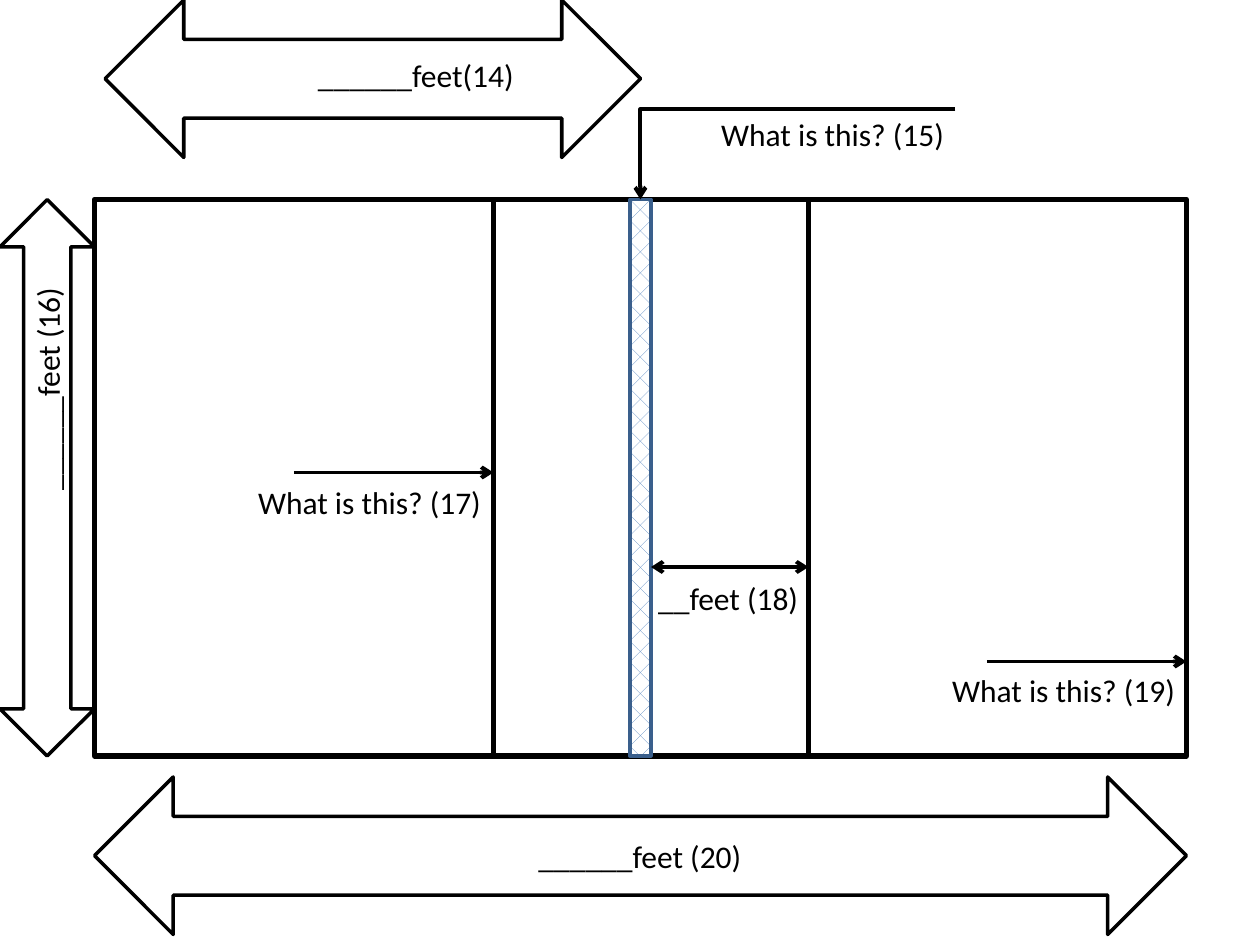
from lxml import etree
from pptx import Presentation
from pptx import util as u
from pptx.dml.color import RGBColor
from pptx.enum import dml, shapes, text
from pptx.oxml.ns import qn

BLACK = RGBColor(0x00, 0x00, 0x00)
WHITE = RGBColor(0xFF, 0xFF, 0xFF)
BLUE = RGBColor(0x4F, 0x81, 0xBD)
NAVY = RGBColor(0x3A, 0x5F, 0x8C)

prs = Presentation()
prs.slide_width, prs.slide_height = u.Inches(10), u.Inches(7.5)
s = prs.slides.add_slide(prs.slide_layouts[6])
COL = prs.slide_width / 120
ROW = prs.slide_height / 90

LEFT, TOP, WIDE, HIGH = 9, 19, 104, 53
RIGHT, BOTTOM = LEFT + WIDE, TOP + HIGH
LINE_A, LINE_B, NET = 47, 77, 60
BOX, ARROW = shapes.MSO_SHAPE.RECTANGLE, shapes.MSO_SHAPE.LEFT_RIGHT_ARROW
STRAIGHT, ELBOW = shapes.MSO_CONNECTOR.STRAIGHT, shapes.MSO_CONNECTOR.ELBOW


def label(words, x, y, w, indent=0.0, rotation=0, size=18, font="Calibri", color=BLACK):
    sp = s.shapes.add_textbox(round(x * COL), round(y * ROW), round(w * COL), u.Inches(0.4))
    sp.rotation = rotation
    tf = sp.text_frame
    tf.word_wrap = True
    tf.auto_size = text.MSO_AUTO_SIZE.SHAPE_TO_FIT_TEXT
    tf.margin_left, tf.margin_right = u.Inches(0.1 + indent), 0
    r = tf.paragraphs[0].add_run()
    r.text = words
    r.font.size, r.font.name = u.Pt(size), font
    r.font.color.rgb = color


def connect(kind, x1, y1, x2, y2, weight, ends=()):
    c = s.shapes.add_connector(kind, round(x1 * COL), round(y1 * ROW), round(x2 * COL), round(y2 * ROW))
    c.line.color.rgb = BLACK
    c.line.width = u.Pt(weight)
    ln = c.line._get_or_add_ln()
    for end in ends:
        etree.SubElement(ln, qn(f"a:{end}"), type="arrow")
    etree.SubElement(c._element.spPr, qn("a:effectLst"))
    return c


drawn = []
for kind, x, y, w, h, weight, rotation in [
    (BOX, LEFT, TOP, WIDE, HIGH, 3, 0),
    (ARROW, 10, 0, 51, 15, 2, 0),
    (ARROW, (LEFT - HIGH) / 2, TOP + (HIGH - 9) / 2, HIGH, 9, 2, 270),
    (BOX, NET, TOP, 2, HIGH, 2, 0),
    (ARROW, LEFT, 74, WIDE, 15, 2, 0),
]:
    sp = s.shapes.add_shape(kind, round(x * COL), round(y * ROW), round(w * COL), round(h * ROW))
    sp.rotation = rotation
    sp.shadow.inherit = False
    sp.fill.solid()
    sp.fill.fore_color.rgb = WHITE
    sp.line.color.rgb = BLACK
    sp.line.width = u.Pt(weight)
    drawn.append(sp)

net = drawn[3]
net.fill.patterned()
net.fill.pattern = dml.MSO_PATTERN.DIAGONAL_BRICK
net.fill.fore_color.rgb, net.fill.back_color.rgb = BLUE, WHITE
net.line.color.rgb = NAVY

for x in (LINE_A, LINE_B):
    connect(STRAIGHT, x, TOP, x, BOTTOM, 3)
for x, y in ((LINE_A, 45), (RIGHT, 63)):
    connect(STRAIGHT, x - 19, y, x, y, 2.25, ["tailEnd"])
connect(STRAIGHT, NET + 2, 54, LINE_B, 54, 2.25, ["headEnd", "tailEnd"])

pointer = connect(ELBOW, 91, 10.4, NET + 1, TOP, 2.25, ["tailEnd"])
pointer._element.spPr.find(qn("a:prstGeom")).set("prst", "bentConnector2")
pointer.end_connect(net, 0)

label("______feet(14)", 25, 4.7, 27, indent=0.34)
label("______feet (16)", -8.5, 36.6, 26, indent=0.34, rotation=270)
label("______feet (20)", 46, 79.1, 27, indent=0.34)
label("__feet (18)", 57.4, 54.6, 24.5, indent=0.34)
for words, x, y, w in [
    ("What is this? (17)", 23.4, 45.4, 24),
    ("What is this? (19)", 89.5, 63.3, 28),
    ("What is this? (15)", 67.5, 10.4, 26),
]:
    label(words, x, y, w)

prs.save("out.pptx")
